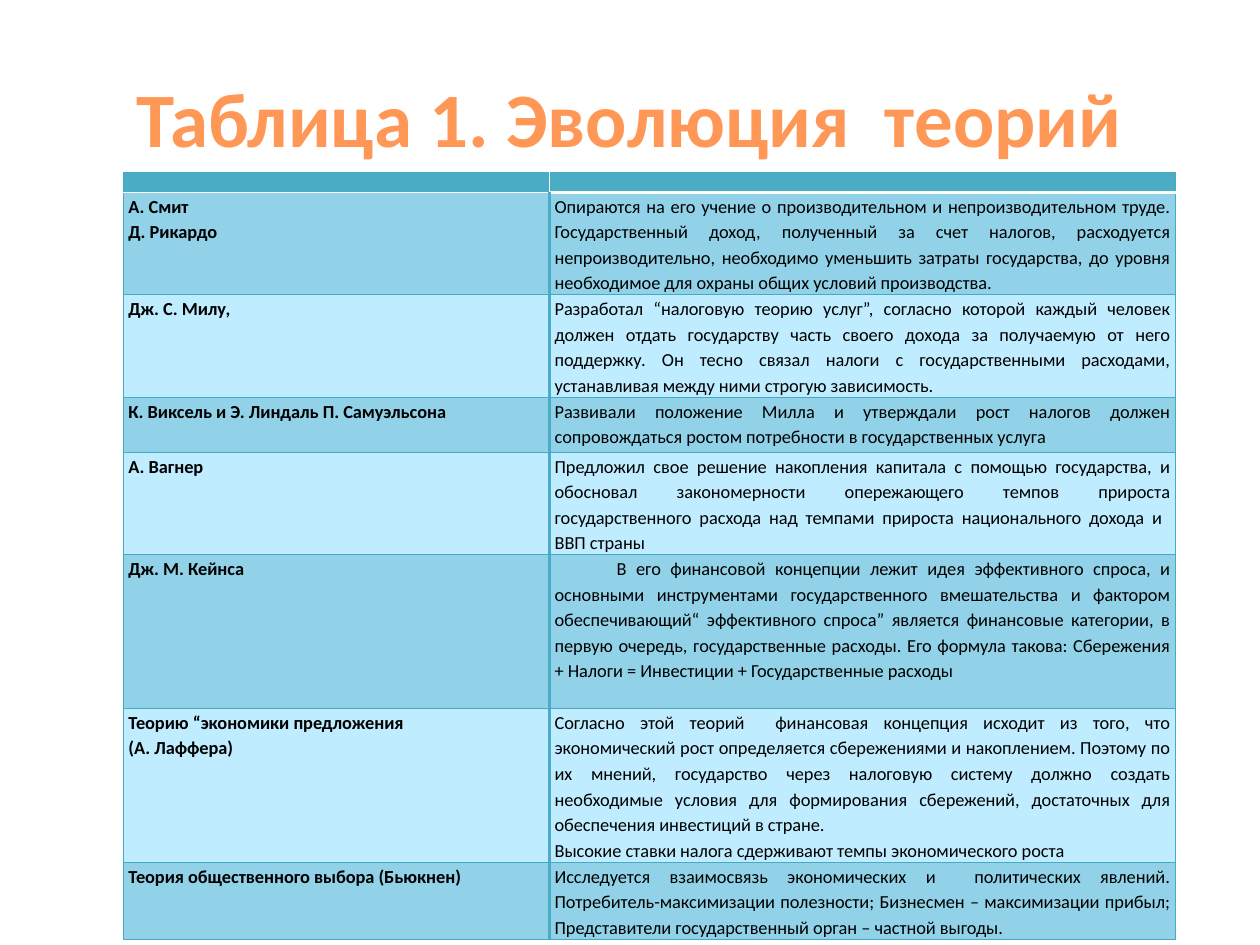
from dataclasses import dataclass

from lxml import etree
from pptx import Presentation
from pptx import util as u
from pptx.dml.color import RGBColor
from pptx.enum import text
from pptx.oxml.ns import qn


@dataclass(frozen=True)
class Theme:
    font: str = "Calibri"
    title: str = "FF9856"
    ink: str = "000000"
    header: str = "4BACC6"
    dark_band: str = "91D2E8"
    light_band: str = "BFECFF"
    border: str = "46AAC5"
    white: str = "FFFFFF"
    title_size: float = 44
    body_size: float = 10.5
    header_size: float = 4
    thin: float = 0.75
    thick: float = 2


THEME = Theme()
TITLE = "Таблица 1. Эволюция  теорий"
COLUMN_WIDTHS = (8.59, 12.62)
HEADER_HEIGHT = 0.4
INDENTED_ROW = 5

# Row height in cm, authors, theory; one string per paragraph
THEORIES = [
    (2.06, ["А. Смит", "Д. Рикардо"],
     ["Опираются на его учение о производительном и непроизводительном труде. "
      "Государственный доход, полученный за счет налогов, расходуется "
      "непроизводительно, необходимо уменьшить затраты государства, до уровня "
      "необходимое для охраны общих условий производства."]),
    (2.06, ["Дж. С. Милу,"],
     ["Разработал “налоговую теорию услуг”, согласно которой каждый человек "
      "должен отдать государству часть своего дохода за получаемую от него "
      "поддержку. Он тесно связал налоги с государственными расходами, "
      "устанавливая между ними строгую зависимость."]),
    (1.11, ["К. Виксель и Э. Линдаль П. Самуэльсона"],
     ["Развивали положение Милла и утверждали рост налогов должен "
      "сопровождаться ростом потребности в государственных услуга"]),
    (2.06, ["А. Вагнер"],
     ["Предложил свое решение накопления капитала с помощью государства, и "
      "обосновал закономерности опережающего темпов прироста государственного "
      "расхода над темпами прироста национального дохода и  ВВП страны"]),
    (3.1, ["Дж. М. Кейнса"],
     ["В его финансовой концепции лежит идея эффективного спроса, и основными "
      "инструментами государственного вмешательства и фактором "
      "обеспечивающий“ эффективного спроса” является финансовые категории, в "
      "первую очередь, государственные расходы. Его формула такова: "
      "Сбережения + Налоги = Инвестиции + Государственные расходы"]),
    (3.1, ["Теорию “экономики предложения", "(А. Лаффера)"],
     ["Согласно этой теорий  финансовая концепция исходит из того, что "
      "экономический рост определяется сбережениями и накоплением. Поэтому по "
      "их мнений, государство через налоговую систему должно создать "
      "необходимые условия для формирования сбережений, достаточных для "
      "обеспечения инвестиций в стране.",
      "Высокие ставки налога сдерживают темпы экономического роста"]),
    (1.55, ["Теория общественного выбора (Бьюкнен)"],
     ["Исследуется взаимосвязь экономических и  политических явлений. "
      "Потребитель-максимизации полезности; Бизнесмен – максимизации прибыл; "
      "Представители государственный орган – частной выгоды."]),
]


def apply(target, values):
    for name, value in values.items():
        setattr(target, name, value)


def format_font(font, size, color, bold):
    apply(font, {"name": THEME.font, "size": u.Pt(size), "bold": bold})
    font.color.rgb = RGBColor.from_string(color)


def add_title(slide):
    title = slide.shapes.title
    apply(title, {"left": u.Cm(1.27), "top": u.Cm(0.76),
                  "width": u.Cm(22.86), "height": u.Cm(3.18)})
    frame = title.text_frame
    frame.text = TITLE
    apply(frame, {"vertical_anchor": text.MSO_ANCHOR.MIDDLE, "word_wrap": True})
    paragraph = frame.paragraphs[0]
    paragraph.alignment = text.PP_ALIGN.CENTER
    format_font(paragraph.runs[0].font, THEME.title_size, THEME.title, True)


def set_borders(cell, **sides):
    """Draw each side, L, R, T or B in that order, from a (colour, points) pair."""
    properties = cell._tc.get_or_add_tcPr()
    for side, (color, width) in sides.items():
        line = etree.SubElement(properties, qn(f"a:ln{side}"), w=str(u.Pt(width)))
        fill = etree.SubElement(line, qn("a:solidFill"))
        etree.SubElement(fill, qn("a:srgbClr"), val=color)


def fill_cell(cell, color):
    cell.fill.solid()
    cell.fill.fore_color.rgb = RGBColor.from_string(color)
    apply(cell, {"margin_left": u.Cm(0.1), "margin_right": u.Cm(0.1),
                 "margin_top": 0, "margin_bottom": 0})


def write_cell(cell, lines, bold):
    cell.text = "\n".join(lines)
    for paragraph in cell.text_frame.paragraphs:
        apply(paragraph, {"alignment": text.PP_ALIGN.JUSTIFY, "line_spacing": 1.15})
        format_font(paragraph.runs[0].font, THEME.body_size, THEME.ink, bold)


def add_header(table):
    thin = (THEME.border, THEME.thin)
    bottoms = ((THEME.header, THEME.thin), (THEME.white, THEME.thick))
    for column, bottom in enumerate(bottoms):
        cell = table.cell(0, column)
        side = "L" if column == 0 else "R"
        set_borders(cell, **{side: thin}, T=thin, B=bottom)
        fill_cell(cell, THEME.header)
        cell.text_frame.paragraphs[0].font.size = u.Pt(THEME.header_size)


def add_theory(table, row, authors, theory):
    thin = (THEME.border, THEME.thin)
    thick = (THEME.header, THEME.thick)
    band = THEME.dark_band if row % 2 else THEME.light_band
    top = {"T": thin} if row > 1 else {}
    author_cell, theory_cell = table.cell(row, 0), table.cell(row, 1)
    set_borders(author_cell, L=thin, R=thick, **top, B=thin)
    set_borders(theory_cell, L=thick, R=thin, **top, B=thin)
    for cell, lines, bold in ((author_cell, authors, True),
                              (theory_cell, theory, False)):
        fill_cell(cell, band)
        write_cell(cell, lines, bold)


def add_theory_table(slide):
    heights = [HEADER_HEIGHT] + [height for height, _, _ in THEORIES]
    table = slide.shapes.add_table(
        len(heights), len(COLUMN_WIDTHS), u.Cm(2.49), u.Cm(3.48),
        u.Cm(sum(COLUMN_WIDTHS)), u.Cm(sum(heights))).table
    for column, width in zip(table.columns, COLUMN_WIDTHS):
        column.width = u.Cm(width)
    for row, height in zip(table.rows, heights):
        row.height = u.Cm(height)
    add_header(table)
    for row, (_, authors, theory) in enumerate(THEORIES, 1):
        add_theory(table, row, authors, theory)
    first = table.cell(INDENTED_ROW, 1).text_frame.paragraphs[0]
    first._p.get_or_add_pPr().set("indent", str(u.Cm(1.25)))


def main():
    presentation = Presentation()
    apply(presentation, {"slide_width": u.Cm(25.4), "slide_height": u.Cm(19.05)})
    slide = presentation.slides.add_slide(presentation.slide_layouts[5])
    add_title(slide)
    add_theory_table(slide)
    presentation.save("out.pptx")


if __name__ == "__main__":
    main()
